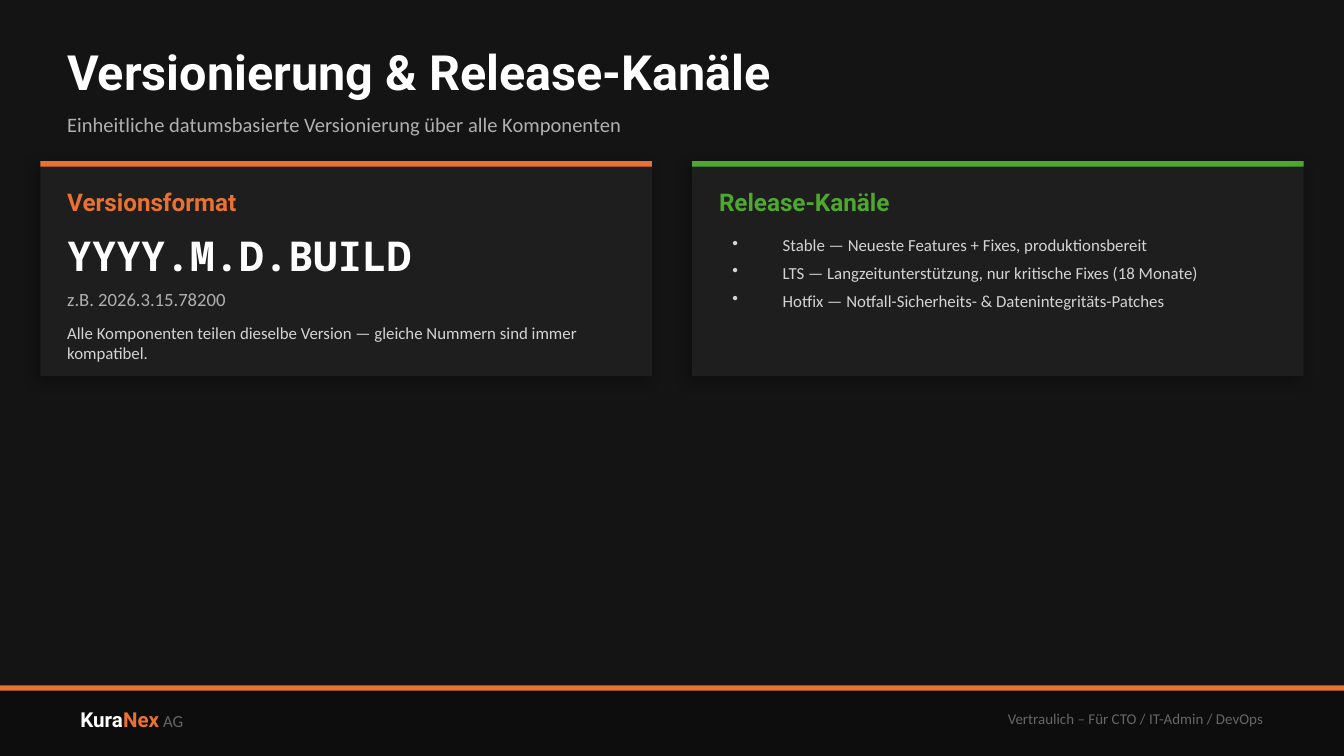
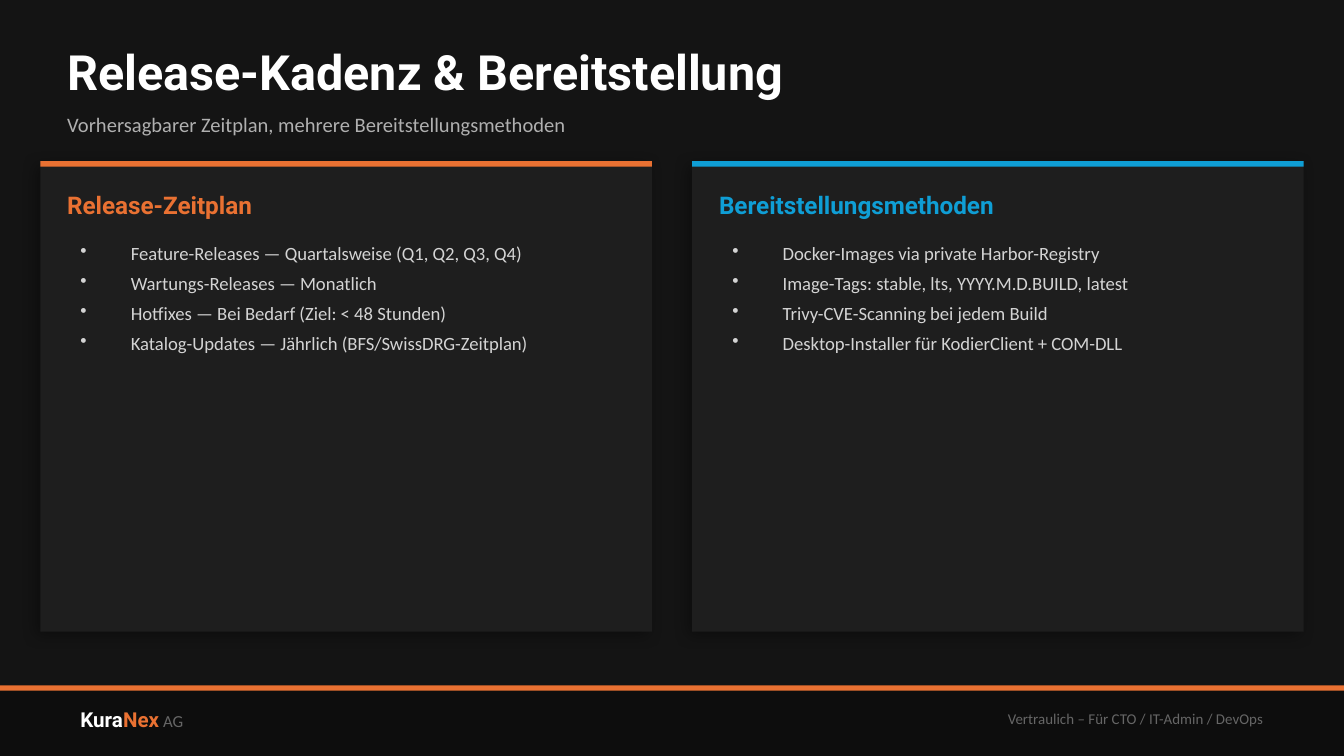
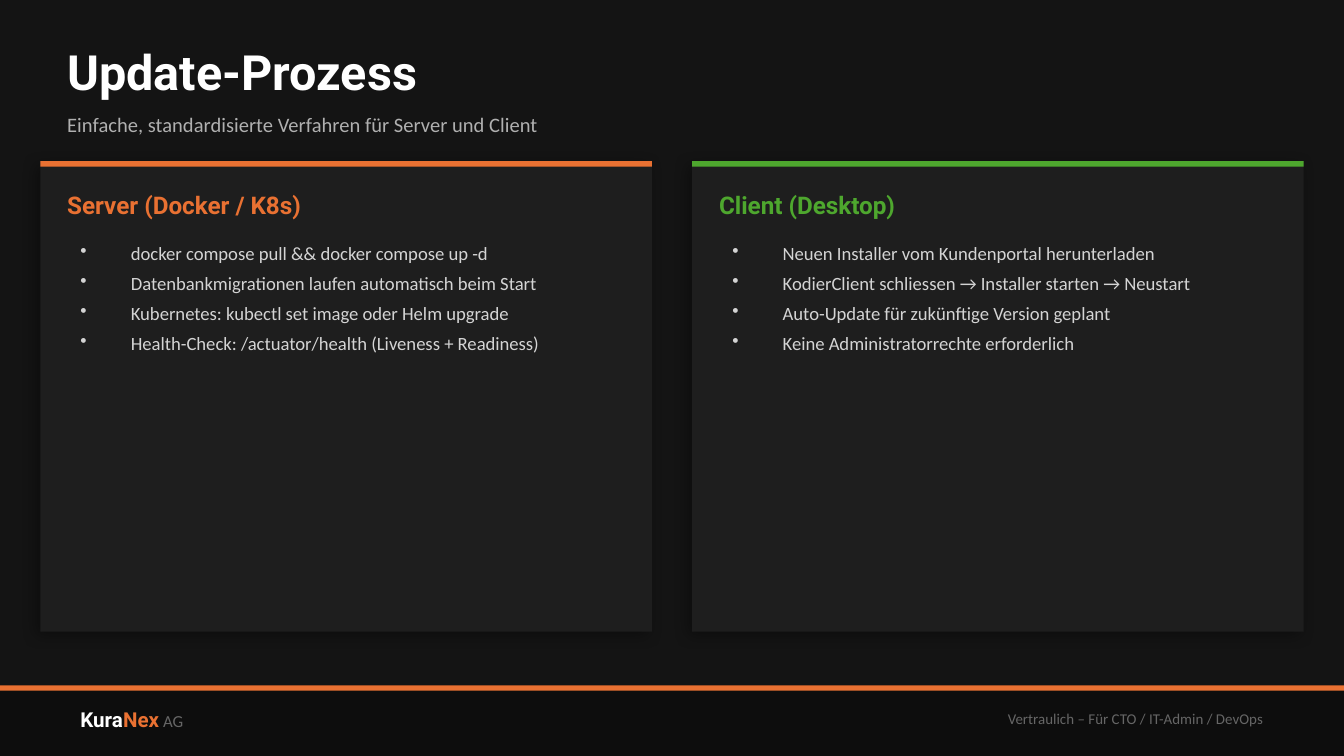
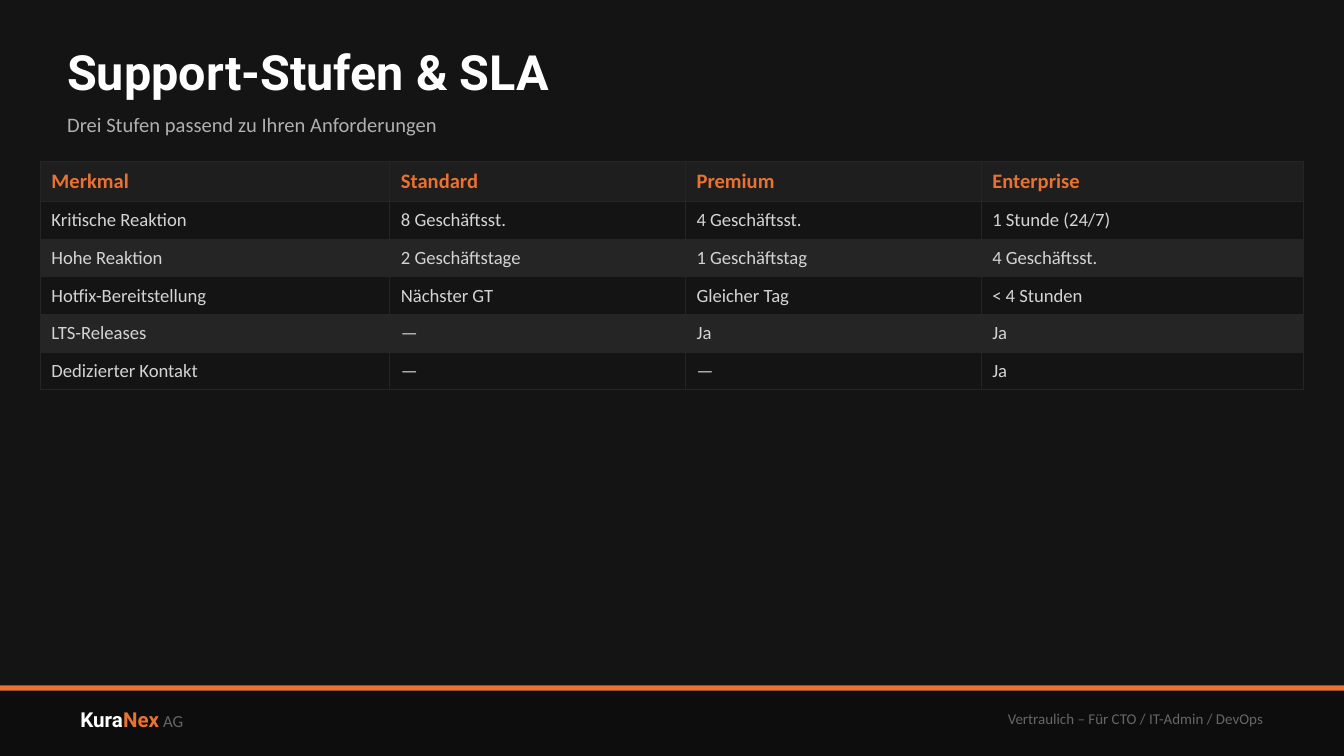
from lxml.etree import SubElement
from pptx import Presentation
from pptx.dml.color import RGBColor
from pptx.enum.shapes import MSO_SHAPE as SHAPE
from pptx.enum.text import MSO_ANCHOR as ANCHOR, PP_ALIGN as ALIGN
from pptx.oxml.ns import qn
from pptx.util import Inches, Pt

BACK, BAND, CARD, LINE = "141414", "0D0D0D", "1E1E1E", "252525"
WHITE, BODY, SUBTLE, MUTED = "FFFFFF", "D4D4D4", "B0B0B0", "666666"
ORANGE, GREEN, BLUE = "E97132", "4EA72E", "0F9ED5"
HEAD, TEXT, MONO = "Roboto", "Calibri", "Noto Sans Mono"
WIDTH = 10
MARGIN, GAP, PAD = 0.3, 0.3, 0.2
TOP, FOOT, FOOT_H = 1.2, 5.1, 0.53
RULE = 0.04
CARD_W = (WIDTH - 2 * MARGIN - GAP) / 2
LEFT, RIGHT = MARGIN, MARGIN + CARD_W + GAP


def rgb(color):
    return RGBColor.from_string(color)


def style(r, size, color, font=TEXT, bold=False):
    r.font.size = Pt(size)
    r.font.name = font
    r.font.bold = bold
    r.font.color.rgb = rgb(color)


class Deck:
    def __init__(self):
        self.prs = Presentation()
        self.prs.slide_width = Inches(WIDTH)
        self.prs.slide_height = Inches(WIDTH) * 9 // 16
        self.s = None

    def slide(self, title, subtitle):
        self.s = self.prs.slides.add_slide(self.prs.slide_layouts[6])
        self.s.background.fill.solid()
        self.s.background.fill.fore_color.rgb = rgb(BACK)
        self.footer()
        self.label(0.5, 0.25, 9, 0.55, title, 26, WHITE, HEAD, True)
        self.label(0.5, 0.75, 9, 0.35, subtitle, 11, SUBTLE)

    def footer(self):
        self.rect(0, FOOT, WIDTH, FOOT_H, BAND)
        self.rect(0, FOOT, WIDTH, RULE, ORANGE)
        p = self.box(0.5, 5.15, 3, 0.4).paragraphs[0]
        for text, *look in (("Kura", 11, WHITE, HEAD, True),
                            ("Nex", 11, ORANGE, HEAD, True),
                            (" AG", 9, MUTED)):
            r = p.add_run()
            r.text = text
            style(r, *look)
        p = self.box(5.5, 5.15, 4, 0.4).paragraphs[0]
        p.text = "Vertraulich – Für CTO / IT-Admin / DevOps"
        p.alignment = ALIGN.RIGHT
        style(p.runs[0], 8, MUTED)

    def rect(self, x, y, w, h, color):
        sp = self.s.shapes.add_shape(
            SHAPE.RECTANGLE, Inches(x), Inches(y), Inches(w), Inches(h))
        sp.shadow.inherit = False
        sp.fill.solid()
        sp.fill.fore_color.rgb = rgb(color)
        sp.line.fill.background()
        return sp

    def box(self, x, y, w, h, anchor=ANCHOR.MIDDLE):
        sp = self.s.shapes.add_textbox(
            Inches(x), Inches(y), Inches(w), Inches(h))
        tf = sp.text_frame
        tf.word_wrap = True
        tf.vertical_anchor = anchor
        return tf

    def label(self, x, y, w, h, text, *look):
        tf = self.box(x, y, w, h)
        tf.margin_left = tf.margin_right = 0
        tf.margin_top = tf.margin_bottom = 0
        tf.text = text
        style(tf.paragraphs[0].runs[0], *look)

    def drop_shadow(self, sp):
        effects = sp._element.spPr.find(qn("a:effectLst"))
        shadow = SubElement(effects, qn("a:outerShdw"), blurRad=str(Pt(8)),
                            dist=str(Pt(3)), dir=str(135 * 60000),
                            algn="bl", rotWithShape="0")
        color = SubElement(shadow, qn("a:srgbClr"), val="000000")
        SubElement(color, qn("a:alpha"), val="35000")

    def card(self, x, h, color, heading, heading_h=0.35):
        self.drop_shadow(self.rect(x, TOP, CARD_W, h, CARD))
        self.rect(x, TOP, CARD_W, RULE, color)
        self.label(x + PAD, TOP + 0.15, CARD_W - 2 * PAD, heading_h,
                   heading, 13, color, HEAD, True)

    def bullets(self, x, y, h, items, size=10):
        tf = self.box(x + PAD, y, CARD_W - 2 * PAD, h, ANCHOR.TOP)
        for i, item in enumerate(items):
            p = tf.add_paragraph() if i else tf.paragraphs[0]
            p.text = item
            p.space_after = Pt(4)
            pPr = p._p.get_or_add_pPr()
            pPr.set("marL", str(Pt(27)))
            pPr.set("indent", str(-Pt(27)))
            SubElement(pPr, qn("a:buSzPct"), val="100000")
            SubElement(pPr, qn("a:buChar"), char="•")
            style(p.runs[0], size, BODY)

    def list_cards(self, *cards):
        for x, (color, heading, items) in zip((LEFT, RIGHT), cards):
            self.card(x, 3.5, color, heading)
            self.bullets(x, 1.75, 2.8, items)

    def borders(self, cell):
        tcPr = cell._tc.get_or_add_tcPr()
        for side in ("lnL", "lnR", "lnT", "lnB"):
            ln = SubElement(tcPr, qn("a:" + side), w=str(Pt(0.5)))
            fill = SubElement(ln, qn("a:solidFill"))
            SubElement(fill, qn("a:srgbClr"), val=LINE)

    def cell(self, cell, text, fill, *look):
        cell.text = text
        cell.vertical_anchor = ANCHOR.MIDDLE
        cell.margin_left = cell.margin_right = Pt(6)
        cell.margin_top = cell.margin_bottom = Pt(4)
        self.borders(cell)
        cell.fill.solid()
        cell.fill.fore_color.rgb = rgb(fill)
        style(cell.text_frame.paragraphs[0].runs[0], *look)

    def table(self, widths, rows):
        heights = [0.3] + [0.28] * (len(rows) - 1)
        table = self.s.shapes.add_table(
            len(rows), len(widths), Inches(MARGIN), Inches(TOP),
            Inches(sum(widths)), Inches(sum(heights))).table
        table.first_row = table.horz_banding = False
        for column, w in zip(table.columns, widths):
            column.width = Inches(w)
        for i, row in enumerate(rows):
            table.rows[i].height = Inches(heights[i])
            if i == 0:
                look = CARD, 11, ORANGE, TEXT, True
            else:
                look = BACK if i % 2 else LINE, 10, BODY
            for j, text in enumerate(row):
                self.cell(table.cell(i, j), text, *look)


def main():
    deck = Deck()

    deck.slide("Versionierung & Release-Kanäle",
               "Einheitliche datumsbasierte Versionierung über alle Komponenten")
    deck.card(LEFT, 1.6, ORANGE, "Versionsformat", 0.3)
    for y, h, text, *look in (
            (1.7, 0.4, "YYYY.M.D.BUILD", 22, WHITE, MONO, True),
            (2.1, 0.25, "z.B. 2026.3.15.78200", 10, SUBTLE),
            (2.4, 0.3, "Alle Komponenten teilen dieselbe Version — gleiche "
                       "Nummern sind immer kompatibel.", 9, BODY)):
        deck.label(LEFT + PAD, y, CARD_W - 2 * PAD, h, text, *look)
    deck.card(RIGHT, 1.6, GREEN, "Release-Kanäle", 0.3)
    deck.bullets(RIGHT, 1.7, 1, [
        "Stable — Neueste Features + Fixes, produktionsbereit",
        "LTS — Langzeitunterstützung, nur kritische Fixes (18 Monate)",
        "Hotfix — Notfall-Sicherheits- & Datenintegritäts-Patches",
    ], 9)

    deck.slide("Release-Kadenz & Bereitstellung",
               "Vorhersagbarer Zeitplan, mehrere Bereitstellungsmethoden")
    deck.list_cards(
        (ORANGE, "Release-Zeitplan", [
            "Feature-Releases — Quartalsweise (Q1, Q2, Q3, Q4)",
            "Wartungs-Releases — Monatlich",
            "Hotfixes — Bei Bedarf (Ziel: < 48 Stunden)",
            "Katalog-Updates — Jährlich (BFS/SwissDRG-Zeitplan)",
        ]),
        (BLUE, "Bereitstellungsmethoden", [
            "Docker-Images via private Harbor-Registry",
            "Image-Tags: stable, lts, YYYY.M.D.BUILD, latest",
            "Trivy-CVE-Scanning bei jedem Build",
            "Desktop-Installer für KodierClient + COM-DLL",
        ]))

    deck.slide("Update-Prozess",
               "Einfache, standardisierte Verfahren für Server und Client")
    deck.list_cards(
        (ORANGE, "Server (Docker / K8s)", [
            "docker compose pull && docker compose up -d",
            "Datenbankmigrationen laufen automatisch beim Start",
            "Kubernetes: kubectl set image oder Helm upgrade",
            "Health-Check: /actuator/health (Liveness + Readiness)",
        ]),
        (GREEN, "Client (Desktop)", [
            "Neuen Installer vom Kundenportal herunterladen",
            "KodierClient schliessen → Installer starten → Neustart",
            "Auto-Update für zukünftige Version geplant",
            "Keine Administratorrechte erforderlich",
        ]))

    deck.slide("Support-Stufen & SLA",
               "Drei Stufen passend zu Ihren Anforderungen")
    deck.table((2.6, 2.2, 2.2, 2.4), [
        ("Merkmal", "Standard", "Premium", "Enterprise"),
        ("Kritische Reaktion", "8 Geschäftsst.", "4 Geschäftsst.",
         "1 Stunde (24/7)"),
        ("Hohe Reaktion", "2 Geschäftstage", "1 Geschäftstag",
         "4 Geschäftsst."),
        ("Hotfix-Bereitstellung", "Nächster GT", "Gleicher Tag",
         "< 4 Stunden"),
        ("LTS-Releases", "—", "Ja", "Ja"),
        ("Dedizierter Kontakt", "—", "—", "Ja"),
    ])

    deck.prs.save("out.pptx")


if __name__ == "__main__":
    main()
